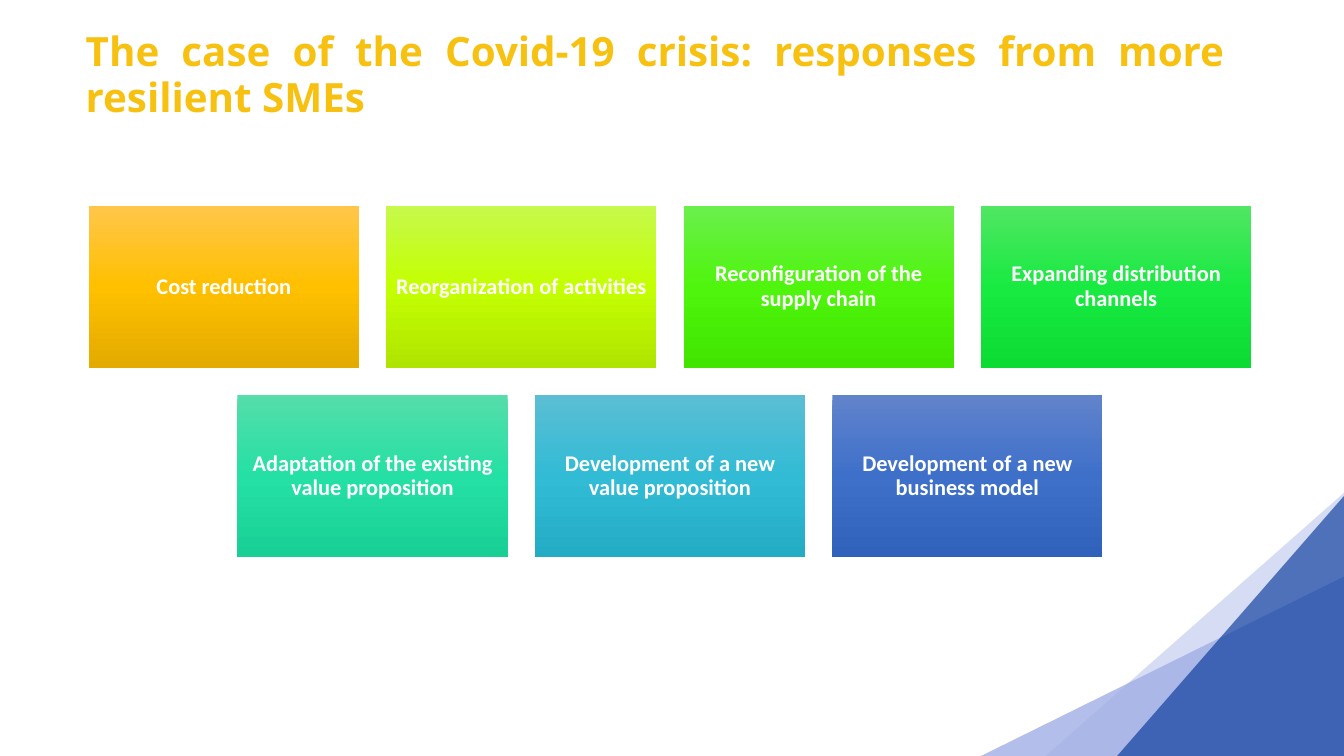
import copy

import pptx
import pptx.dml.color
import pptx.enum.shapes
import pptx.enum.text
import pptx.util
from lxml import etree
from pptx.oxml.ns import qn

Inches = pptx.util.Inches
Pt = pptx.util.Pt
RGBColor = pptx.dml.color.RGBColor
PP_ALIGN = pptx.enum.text.PP_ALIGN
MIDDLE = pptx.enum.text.MSO_ANCHOR.MIDDLE
SHAPE = pptx.enum.shapes.MSO_SHAPE

SLIDE_WIDTH, SLIDE_HEIGHT = 13.33, 7.5
GOLD = RGBColor(0xF7, 0xC1, 0x11)
WHITE = RGBColor(0xFF, 0xFF, 0xFF)
PALE_BLUE = RGBColor(0xC5, 0xCE, 0xEF)
SOFT_BLUE = RGBColor(0x9F, 0xAE, 0xE5)
DEEP_BLUE = RGBColor(0x00, 0x33, 0x99)

AMBER = (RGBColor(0xFF, 0xC6, 0x4B), RGBColor(0xFF, 0xC0, 0x00), RGBColor(0xE3, 0xAB, 0x00))
LIME = (RGBColor(0xC6, 0xF9, 0x4C), RGBColor(0xC4, 0xFF, 0x01), RGBColor(0xAF, 0xE4, 0x00))
GREEN = (RGBColor(0x6B, 0xEF, 0x4D), RGBColor(0x4F, 0xF5, 0x0D), RGBColor(0x41, 0xE5, 0x00))
EMERALD = (RGBColor(0x51, 0xE6, 0x63), RGBColor(0x19, 0xEA, 0x42), RGBColor(0x0C, 0xDB, 0x34))
MINT = (RGBColor(0x55, 0xDD, 0xAB), RGBColor(0x25, 0xE0, 0xA4), RGBColor(0x18, 0xD0, 0x95))
CYAN = (RGBColor(0x5B, 0xBE, 0xD4), RGBColor(0x32, 0xBB, 0xD5), RGBColor(0x24, 0xAC, 0xC5))
BLUE = (RGBColor(0x61, 0x83, 0xCB), RGBColor(0x3E, 0x70, 0xCA), RGBColor(0x30, 0x62, 0xBB))

RESPONSE_ROWS = [
    [("Cost reduction", AMBER),
     ("Reorganization of activities", LIME),
     ("Reconfiguration of the supply chain", GREEN),
     ("Expanding distribution channels", EMERALD)],
    [("Adaptation of the existing value proposition", MINT),
     ("Development of a new value proposition", CYAN),
     ("Development of a new business model", BLUE)],
]
CARD_WIDTH, CARD_HEIGHT, CARD_GAP = 2.68, 1.61, 0.27
CARDS_CENTER, CARDS_TOP = 6.645, 2.04

# left, top, width, height before rotation, colour, opacity in percent
CORNER_TRIANGLES = [
    (10.54, 4.71, 2.62, 2.97, PALE_BLUE, 71),
    (10.64, 4.81, 1.78, 3.6, SOFT_BLUE, 79),
    (10.91, 5.08, 2.59, 2.26, DEEP_BLUE, 63),
]


def add_plain_shape(slide, kind, left, top, width, height):
    shape = slide.shapes.add_shape(
        kind, Inches(left), Inches(top), Inches(width), Inches(height))
    shape.shadow.inherit = False
    shape.line.fill.background()
    return shape


def add_corner_triangle(slide, left, top, width, height, color, opacity):
    triangle = add_plain_shape(
        slide, SHAPE.ISOSCELES_TRIANGLE, left, top, width, height)
    triangle.adjustments[0] = 0
    triangle.rotation = 270
    triangle.fill.solid()
    triangle.fill.fore_color.rgb = color
    solid_color = triangle.element.spPr.find(qn("a:solidFill"))[0]
    etree.SubElement(solid_color, qn("a:alpha"), val=str(opacity * 1000))


def fill_downward(shape, colors):
    """Fill with a three-stop gradient from top to bottom."""
    shape.fill.gradient()
    shape.fill.gradient_angle = 270
    stop_list = shape.element.spPr.find(".//" + qn("a:gsLst"))
    stop_list.insert(1, copy.deepcopy(stop_list[0]))
    for stop, color, position in zip(shape.fill.gradient_stops, colors, (0, 0.5, 1)):
        stop.color.rgb = color
        stop.position = position


def style_text(paragraph, font_name, size, color, alignment, line_spacing):
    paragraph.alignment = alignment
    paragraph.line_spacing = line_spacing
    font = paragraph.runs[0].font
    font.name = font_name
    font.size = Pt(size)
    font.bold = True
    font.color.rgb = color


def add_response_card(slide, left, top, label, colors):
    card = add_plain_shape(slide, SHAPE.RECTANGLE, left, top, CARD_WIDTH, CARD_HEIGHT)
    fill_downward(card, colors)
    frame = card.text_frame
    frame.word_wrap = True
    frame.vertical_anchor = MIDDLE
    frame.margin_left = frame.margin_right = Inches(0.07)
    frame.margin_top = frame.margin_bottom = Inches(0.07)
    frame.text = label
    style_text(frame.paragraphs[0], "Calibri", 16, WHITE, PP_ALIGN.CENTER, 0.9)


def add_response_rows(slide):
    """Lay out the cards in rows that share one centre line."""
    step = CARD_WIDTH + CARD_GAP
    for row_index, responses in enumerate(RESPONSE_ROWS):
        row_left = CARDS_CENTER - (len(responses) * step - CARD_GAP) / 2
        top = CARDS_TOP + row_index * (CARD_HEIGHT + CARD_GAP)
        for column, (label, colors) in enumerate(responses):
            add_response_card(slide, row_left + column * step, top, label, colors)


def set_title(slide, text):
    title = slide.shapes.title
    title.left, title.top = Inches(0.75), Inches(0.19)
    title.width, title.height = Inches(11.5), Inches(1.13)
    frame = title.text_frame
    frame.text = text
    frame.word_wrap = True
    frame.auto_size = pptx.enum.text.MSO_AUTO_SIZE.NONE
    frame.vertical_anchor = MIDDLE
    style_text(frame.paragraphs[0], "Open Sans", 28.8, GOLD, PP_ALIGN.JUSTIFY, 0.95)


def main():
    presentation = pptx.Presentation()
    presentation.slide_width = Inches(SLIDE_WIDTH)
    presentation.slide_height = Inches(SLIDE_HEIGHT)
    slide = presentation.slides.add_slide(presentation.slide_layouts[5])
    for triangle in CORNER_TRIANGLES:
        add_corner_triangle(slide, *triangle)
    set_title(slide, "The case of the Covid-19 crisis: responses from more resilient SMEs")
    add_response_rows(slide)
    presentation.save("out.pptx")


if __name__ == "__main__":
    main()
